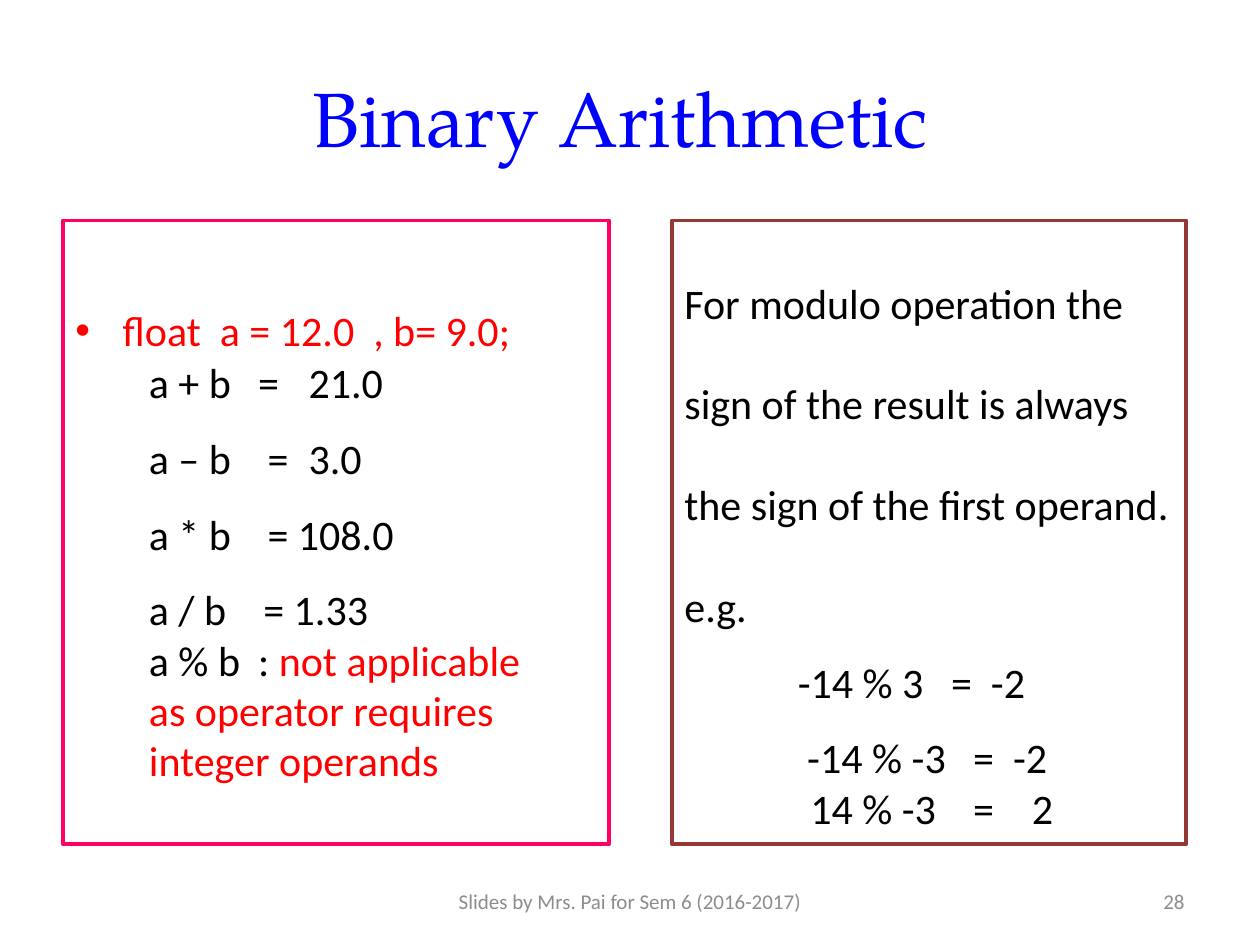
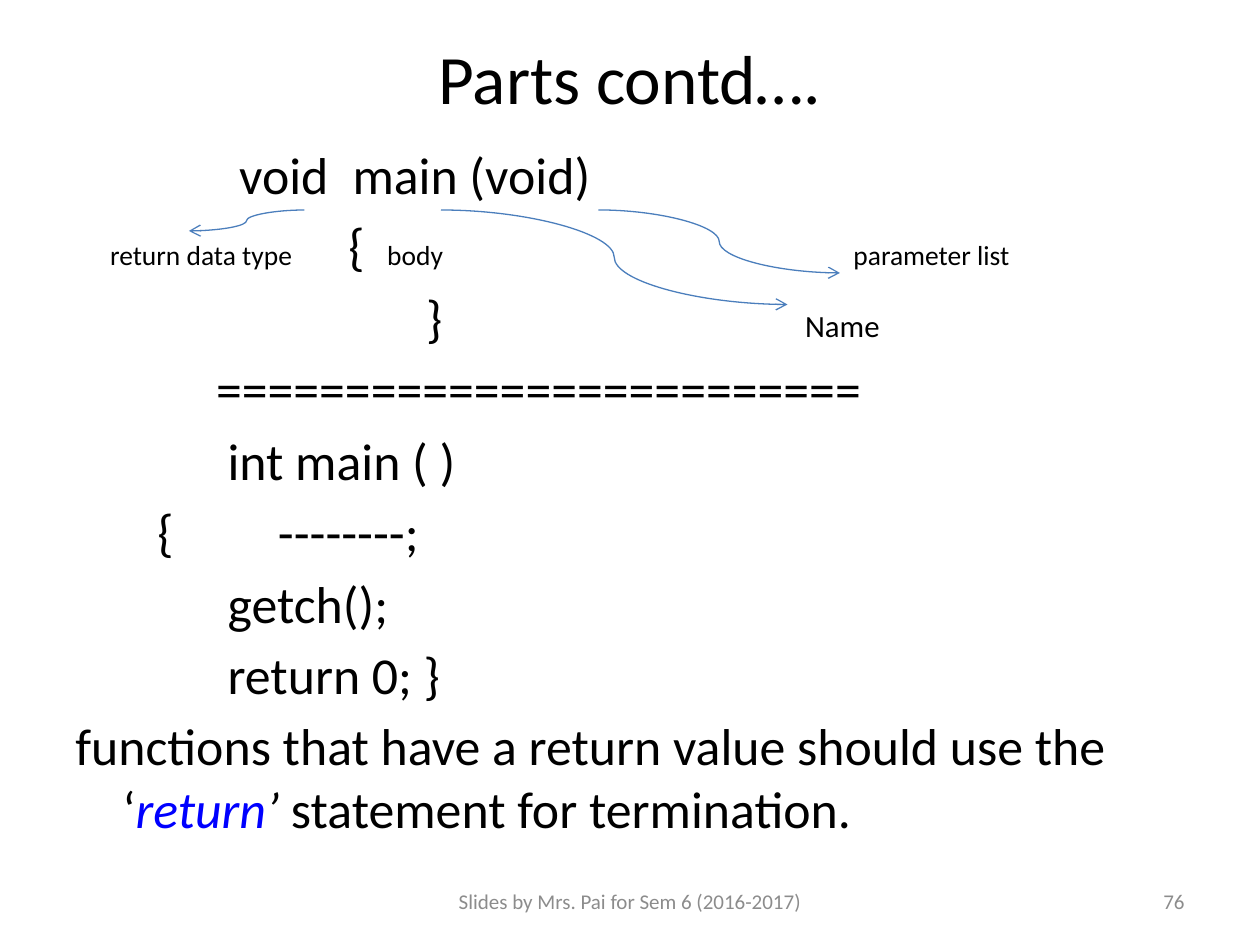
from dataclasses import dataclass, field
from typing import Any, NamedTuple

from lxml import etree
from pptx import Presentation
from pptx import util as u
from pptx.dml.color import RGBColor
from pptx.enum import shapes, text
from pptx.oxml import ns

PX = 7620  # EMU in one px: 120 px to the inch


@dataclass(frozen=True)
class Theme:
    font: str = "Calibri"
    title_font: str = "TeX Gyre Pagella"
    black: str = "000000"
    blue: str = "0000FF"
    red: str = "FF0000"
    grey: str = "8C8C8C"
    pink: str = "FF0066"
    brown: str = "953735"
    arrow: str = "4B7EBC"
    large_title: float = 44
    title: float = 39.6
    code: float = 29.6
    body: float = 24
    name_label: float = 17.6
    label: float = 15.7
    footer: float = 12
    frame_line: float = 2.25
    arrow_line: float = 0.75


THEME = Theme()


class Box(NamedTuple):
    left: int
    top: int
    width: int
    height: int


class Run(NamedTuple):
    words: str
    size: float = THEME.body
    color: str = THEME.black
    font: str = THEME.font
    italic: bool = False


@dataclass(frozen=True)
class Line:
    """One paragraph; tab stops and hanging indent are in px."""
    runs: list[Run]
    tabs: tuple[int, ...] = ()
    layout: dict[str, Any] = field(default_factory=dict)
    hanging: int = 0
    bullet: str = ""


class Arrow(NamedTuple):
    start: tuple[int, int]
    end: tuple[int, int]


CENTER = {"alignment": text.PP_ALIGN.CENTER}
RIGHT = {"alignment": text.PP_ALIGN.RIGHT}
OPEN = {"line_spacing": 1.5}
DOUBLE = {"line_spacing": 2.0}
AFTER_BLANK = {"space_before": u.Pt(29.3)}
CODE_GAP = {"space_before": u.Pt(5.3)}

FOOTER = Box(410, 834, 380, 48)
PAGE_NUMBER = Box(860, 834, 280, 48)
FRAME_TOP, FRAME_HEIGHT = 210, 594
HANGING = 45


def scaled(*lengths: int) -> list[u.Emu]:
    return [u.Emu(length * PX) for length in lengths]


def set_all(target: Any, values: dict[str, Any]) -> None:
    for name, value in values.items():
        setattr(target, name, value)


def add_element(parent: Any, tag: str, **attributes: Any) -> Any:
    values = {name: str(value) for name, value in attributes.items()}
    return etree.SubElement(parent, ns.qn(tag), values)


def write_line(paragraph: Any, line: Line) -> None:
    set_all(paragraph, line.layout)
    properties = paragraph._p.get_or_add_pPr()
    if line.hanging:
        properties.set("marL", str(line.hanging * PX))
        properties.set("indent", str(-line.hanging * PX))
    if line.bullet:
        add_element(properties, "a:buFont", typeface="Arial")
        add_element(properties, "a:buChar", char=line.bullet)
    if line.tabs:
        stops = add_element(properties, "a:tabLst")
        for position in line.tabs:
            add_element(stops, "a:tab", pos=position * PX, algn="l")
    for item in line.runs:
        run = paragraph.add_run()
        run.text = item.words
        set_all(run.font, {"name": item.font, "size": u.Pt(item.size),
                           "italic": item.italic})
        run.font.color.rgb = RGBColor.from_string(item.color)


def fill_text(shape: Any, lines: list[Line], anchor: Any) -> None:
    frame = shape.text_frame
    set_all(frame, {"word_wrap": True, "vertical_anchor": anchor})
    for index, line in enumerate(lines):
        paragraph = frame.add_paragraph() if index else frame.paragraphs[0]
        write_line(paragraph, line)


def add_text(slide: Any, box: Box, lines: list[Line],
             anchor: Any = text.MSO_ANCHOR.TOP) -> None:
    fill_text(slide.shapes.add_textbox(*scaled(*box)), lines, anchor)


def add_frame(slide: Any, left: int, width: int, color: str,
              lines: list[Line], inset: int = 6) -> None:
    """Outlined panel whose text starts inset px below its top."""
    box = Box(left, FRAME_TOP, width, FRAME_HEIGHT)
    shape = slide.shapes.add_shape(shapes.MSO_SHAPE.RECTANGLE, *scaled(*box))
    shape.shadow.inherit = False
    shape.fill.background()
    shape.line.color.rgb = RGBColor.from_string(color)
    shape.line.width = u.Pt(THEME.frame_line)
    shape.text_frame.margin_top = scaled(inset)[0]
    fill_text(shape, lines, text.MSO_ANCHOR.TOP)
    for paragraph in shape.text_frame.paragraphs:
        paragraph.alignment = text.PP_ALIGN.LEFT


def add_arrow(slide: Any, arrow: Arrow) -> None:
    connector = slide.shapes.add_connector(
        shapes.MSO_CONNECTOR.CURVE, *scaled(*arrow.start, *arrow.end))
    connector.line.color.rgb = RGBColor.from_string(THEME.arrow)
    connector.line.width = u.Pt(THEME.arrow_line)
    add_element(connector.line._get_or_add_ln(), "a:tailEnd", type="arrow")
    add_element(connector._element.spPr, "a:effectLst")


def add_slide(presentation: Any, title: Run, title_height: int,
              number: int) -> Any:
    """Blank slide with the shared title, footer and page number."""
    slide = presentation.slides.add_slide(presentation.slide_layouts[6])
    footer = Run("Slides by Mrs. Pai for Sem 6 (2016-2017)",
                 THEME.footer, THEME.grey)
    page = footer._replace(words=str(number))
    for box, run, layout in (
        (Box(60, 36, 1080, title_height), title, CENTER),
        (FOOTER, footer, CENTER),
        (PAGE_NUMBER, page, RIGHT),
    ):
        add_text(slide, box, [Line([run], layout=layout)],
                 text.MSO_ANCHOR.MIDDLE)
    return slide


def build_arithmetic(presentation: Any) -> None:
    title = Run("Binary Arithmetic ", THEME.large_title, THEME.blue,
                THEME.title_font)
    slide = add_slide(presentation, title, 150, 28)

    declaration = Run("float  a = 12.0  , b= 9.0;", color=THEME.red)
    add_frame(slide, 60, 520, THEME.pink,
              [Line([declaration], hanging=HANGING, bullet="•")], inset=80)

    results = [
        ("a + b\t=\t21.0", (104, 152)),
        ("a – b\t=\t3.0", (113, 152)),
        ("a * b\t= 108.0", (113,)),
        ("a / b\t= 1.33", (109,)),
    ]
    modulo = [Run("a % b\t: "),
              Run("not applicable as operator requires integer operands",
                  color=THEME.red)]
    add_text(slide, Box(130, 310, 390, 449),
             [Line([Run(words)], tabs, OPEN) for words, tabs in results]
             + [Line(modulo, (104,))])

    rule = ("For modulo operation the sign of the result is always "
            "the sign of the first operand.")
    add_frame(slide, 640, 490, THEME.brown, [
        Line([Run(rule)], layout=DOUBLE),
        Line([Run("e.g.")], layout=AFTER_BLANK),
        Line([Run("\t-14 % 3\t=\t-2")], (108, 254, 292), OPEN),
        Line([Run("\t-14 % -3\t=\t-2")], (117, 275, 313), OPEN),
        Line([Run("\t14 % -3\t=\t2")], (120, 275, 331)),
    ])


def build_parts(presentation: Any) -> None:
    slide = add_slide(presentation, Run("Parts contd….", THEME.title), 74, 76)

    def code(words: str) -> Run:
        return Run(words, THEME.code)

    def label(words: str) -> Run:
        return Run(words, THEME.label)

    rows = [
        ([code("\tvoid\tmain (void)")], (156, 264)),
        ([code("\t"), label("return data type\t"), code("{\t"),
          label("body\tparameter list")], (33, 260, 297, 741)),
        ([code("\t}\t"), Run("Name", THEME.name_label)], (334, 695)),
        ([code("\t" + "=" * 25)], (134,)),
        ([code("\tint main ( )")], (145,)),
        ([code("\t{\t--------;")], (78, 193)),
        ([code("\tgetch();")], (145,)),
        ([code("\treturn 0; }")], (145,)),
    ]
    closing = [
        code("functions that have a return value should use the ‘"),
        code("return")._replace(color=THEME.blue, italic=True),
        code("’")._replace(italic=True),
        code(" statement for termination."),
    ]
    add_text(slide, Box(60, 130, 1080, 674),
             [Line(runs, tabs, CODE_GAP) for runs, tabs in rows]
             + [Line(closing, layout=CODE_GAP, hanging=HANGING)])

    to_parameters = Arrow((570, 200), (800, 260))
    to_return_type = Arrow((290, 200), (180, 220))
    to_name = Arrow((420, 200), (750, 290))
    for arrow in (to_parameters, to_return_type, to_name):
        add_arrow(slide, arrow)


def main() -> None:
    presentation = Presentation()
    presentation.slide_width, presentation.slide_height = scaled(1200, 900)
    build_arithmetic(presentation)
    build_parts(presentation)
    presentation.save("out.pptx")


if __name__ == "__main__":
    main()
